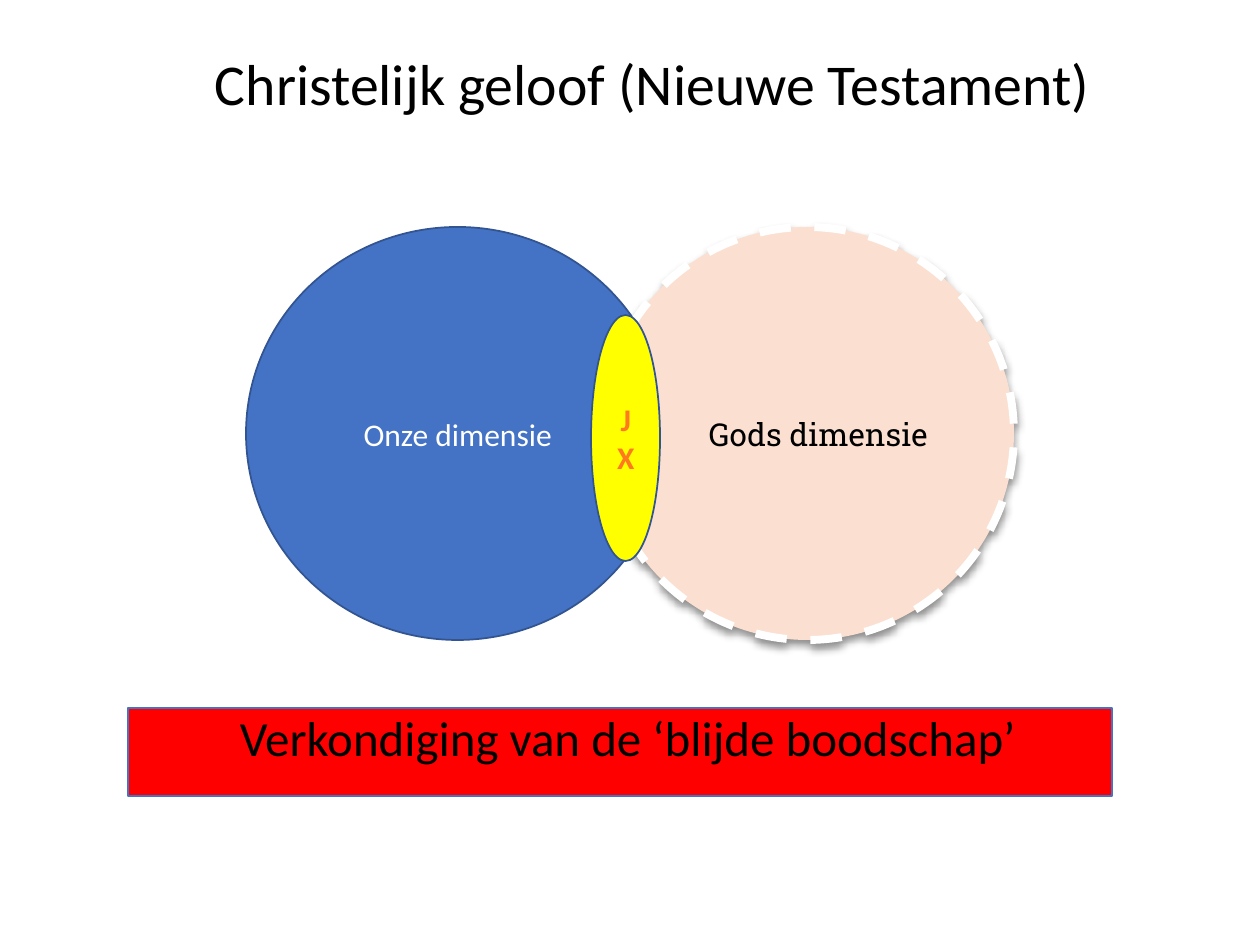
from lxml import etree
from pptx import Presentation
from pptx.dml.color import RGBColor
from pptx.enum.dml import MSO_LINE
from pptx.enum.shapes import MSO_SHAPE
from pptx.enum.text import MSO_ANCHOR, PP_ALIGN
from pptx.oxml.ns import qn
from pptx.util import Emu, Pt

RECTANGLE, OVAL = MSO_SHAPE.RECTANGLE, MSO_SHAPE.OVAL
TOP, MIDDLE = MSO_ANCHOR.TOP, MSO_ANCHOR.MIDDLE
LEFT, CENTER = PP_ALIGN.LEFT, PP_ALIGN.CENTER
DASH = MSO_LINE.DASH

BLACK = RGBColor(0x00, 0x00, 0x00)
WHITE = RGBColor(0xFF, 0xFF, 0xFF)
BLUE = RGBColor(0x44, 0x72, 0xC4)
DARK_BLUE = RGBColor(0x32, 0x54, 0x91)
PEACH = RGBColor(0xFB, 0xE0, 0xD1)
YELLOW = RGBColor(0xFF, 0xFF, 0x00)
ORANGE = RGBColor(0xFF, 0x7A, 0x1F)
RED = RGBColor(0xFF, 0x00, 0x00)

EMU_PER_PX = 914400 // 126
PAGE_SIZE = (1260, 945)

# Content: text, place (left, top, width, height) and format
TITLE = ("Christelijk geloof (Nieuwe Testament)", (63, 49, 1134, 147),
         dict(size=33, anchor=TOP, align=LEFT, inset=152, spacing=0.9))
SHAPES = [
    # Message bar
    (RECTANGLE, (128, 708, 984, 88), dict(fill=RED, line=BLUE),
     "Verkondiging van de ‘blijde boodschap’",
     dict(size=28, anchor=TOP, align=LEFT, inset=112, spacing=0.9)),
    # Two overlapping dimensions
    (OVAL, (246, 227, 423, 413), dict(fill=BLUE, line=DARK_BLUE),
     "Onze dimensie", dict(color=WHITE)),
    (OVAL, (601, 227, 413, 413),
     dict(fill=PEACH, line=WHITE, weight=4.5, dash=DASH, shadow=True),
     "Gods dimensie", dict(font="Roboto Slab", inset=34)),
    # Overlap
    (OVAL, (591, 315, 69, 246), dict(fill=YELLOW, line=DARK_BLUE),
     "JX", dict(color=ORANGE, bold=True)),
]


def px(value):
    return Emu(value * EMU_PER_PX)


def write_text(box, text, size=18, font="Calibri", color=BLACK, bold=False,
               anchor=MIDDLE, align=CENTER, inset=13, spacing=1.0):
    frame = box.text_frame
    frame.word_wrap = True
    frame.vertical_anchor = anchor
    frame.margin_left = px(inset)
    para = frame.paragraphs[0]
    para.alignment = align
    para.line_spacing = spacing
    span = para.add_run()
    span.text = text
    span.font.size = Pt(size)
    span.font.name = font
    span.font.bold = bold
    span.font.color.rgb = color


def add_shadow(shape):
    effects = shape._element.spPr.find(qn("a:effectLst"))
    outer = etree.SubElement(effects, qn("a:outerShdw"), blurRad=str(Pt(5)),
                             dist=str(Pt(3)), dir=str(90 * 60000),
                             algn="ctr", rotWithShape="0")
    color = etree.SubElement(outer, qn("a:srgbClr"), val=str(BLACK))
    etree.SubElement(color, qn("a:alpha"), val="43000")


def add_figure(page, kind, place, fill, line, weight=1, dash=None, shadow=False):
    shape = page.shapes.add_shape(kind, *map(px, place))
    shape.fill.solid()
    shape.fill.fore_color.rgb = fill
    shape.line.color.rgb = line
    shape.line.width = Pt(weight)
    if dash:
        shape.line.dash_style = dash
    shape.shadow.inherit = False
    if shadow:
        add_shadow(shape)
    return shape


def main():
    deck = Presentation()
    deck.slide_width, deck.slide_height = map(px, PAGE_SIZE)
    page = deck.slides.add_slide(deck.slide_layouts[6])

    # Title
    text, place, text_format = TITLE
    write_text(page.shapes.add_textbox(*map(px, place)), text, **text_format)

    # Bar and circles, from back to front
    for kind, place, look, text, text_format in SHAPES:
        write_text(add_figure(page, kind, place, **look), text, **text_format)

    deck.save("out.pptx")


if __name__ == "__main__":
    main()
